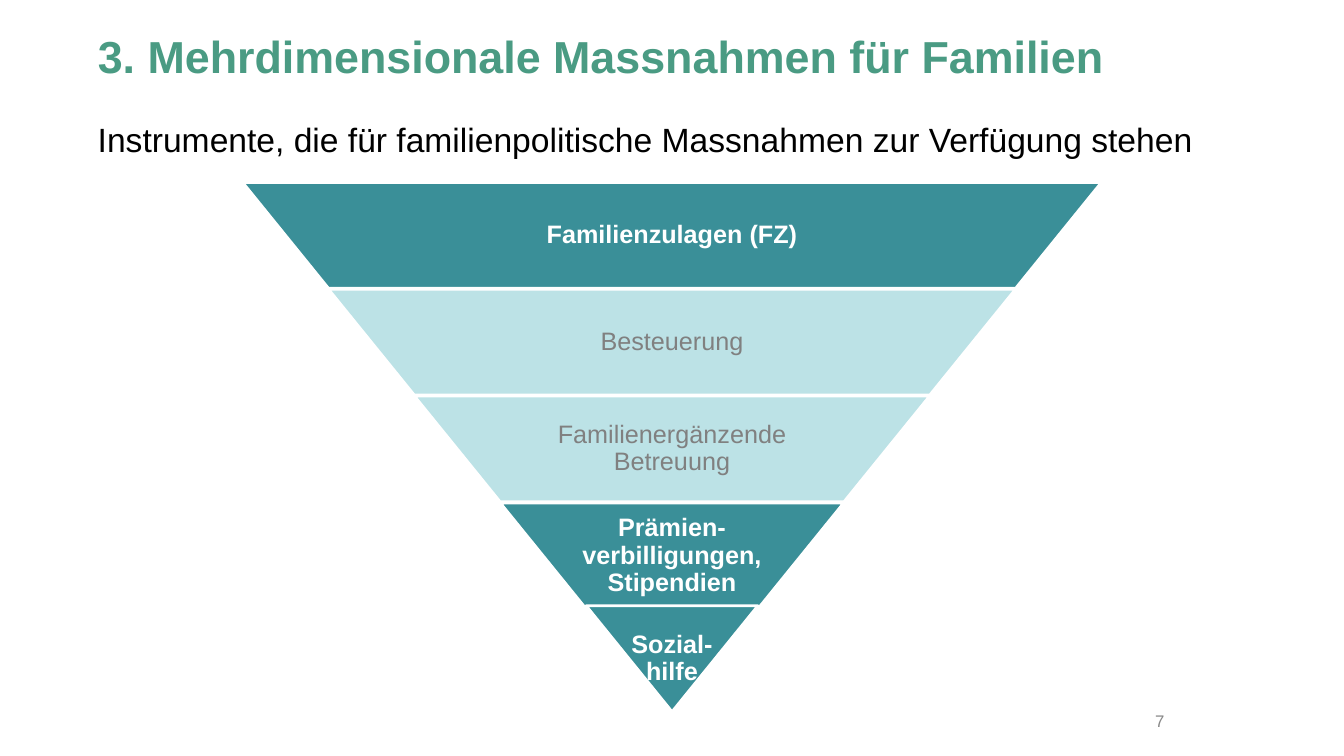
from dataclasses import dataclass

from pptx import Presentation
from pptx.dml.color import RGBColor
from pptx.enum.shapes import MSO_SHAPE
from pptx.enum.text import MSO_ANCHOR, MSO_AUTO_SIZE, PP_ALIGN
from pptx.shapes.base import BaseShape
from pptx.slide import Slide
from pptx.util import Inches, Length, Pt

SLIDE_WIDTH, SLIDE_HEIGHT = Inches(13.33), Inches(7.5)

# Pyramid grid, in percent of the slide's width and height
CENTER, PYRAMID_TOP, LAST_TOP = 50, 24.13, 80.13
COLUMN, ROW, TIER_HEIGHT = 12.78, 14.13, 14
TEXT_SHARE = 0.65
TIER_SLOPE = 0.81

TEAL, PALE_TEAL, GREEN = "3A8F98", "BCE2E6", "4A9B83"
WHITE, BLACK, GRAY, PAGE_GRAY = "FFFFFF", "000000", "808080", "888888"


@dataclass(frozen=True)
class Box:
    """A rectangle in percent of the slide's width and height."""

    left: float
    top: float
    width: float
    height: float

    def lengths(self) -> tuple[Length, Length, Length, Length]:
        return (
            Length(SLIDE_WIDTH * self.left / 100),
            Length(SLIDE_HEIGHT * self.top / 100),
            Length(SLIDE_WIDTH * self.width / 100),
            Length(SLIDE_HEIGHT * self.height / 100),
        )


@dataclass(frozen=True)
class TextStyle:
    size: int
    color: str
    bold: bool = False
    alignment: PP_ALIGN = PP_ALIGN.LEFT
    anchor: MSO_ANCHOR = MSO_ANCHOR.MIDDLE
    line_spacing: float = 1.0
    inset: float = 0.05


@dataclass(frozen=True)
class Tier:
    text: str
    highlighted: bool


TITLE_STYLE = TextStyle(32, GREEN, bold=True, line_spacing=0.9)
SUBTITLE_STYLE = TextStyle(24, BLACK, anchor=MSO_ANCHOR.TOP)
PAGE_STYLE = TextStyle(12, PAGE_GRAY, alignment=PP_ALIGN.RIGHT)

TIERS = [
    Tier("Familienzulagen (FZ)", True),
    Tier("Besteuerung", False),
    Tier("Familienergänzende Betreuung", False),
    Tier("Prämien-verbilligungen, Stipendien", True),
    Tier("Sozial-\vhilfe", True),
]


def rgb(color: str) -> RGBColor:
    return RGBColor.from_string(color)


def write_text(shape: BaseShape, text: str, style: TextStyle) -> None:
    frame = shape.text_frame
    frame.text = text
    frame.word_wrap = True
    frame.auto_size = MSO_AUTO_SIZE.NONE
    frame.vertical_anchor = style.anchor
    frame.margin_left = frame.margin_right = Inches(style.inset)
    frame.margin_top = frame.margin_bottom = Inches(style.inset)
    paragraph = frame.paragraphs[0]
    paragraph.alignment = style.alignment
    paragraph.line_spacing = style.line_spacing
    paragraph.font.name = "Arial"
    paragraph.font.size = Pt(style.size)
    paragraph.font.bold = style.bold
    paragraph.font.color.rgb = rgb(style.color)


def add_title(slide: Slide, text: str, box: Box) -> None:
    title = slide.shapes.title
    title.left, title.top, title.width, title.height = box.lengths()
    write_text(title, text, TITLE_STYLE)


def add_text(slide: Slide, text: str, box: Box, style: TextStyle) -> None:
    write_text(slide.shapes.add_textbox(*box.lengths()), text, style)


def centered_box(top: float, width: float) -> Box:
    return Box(CENTER - width / 2, top, width, TIER_HEIGHT)


def add_tier(slide: Slide, index: int, tier: Tier) -> None:
    columns = len(TIERS) - index
    width = columns * COLUMN
    top = min(PYRAMID_TOP + index * ROW, LAST_TOP)
    shape = slide.shapes.add_shape(
        MSO_SHAPE.TRAPEZOID, *centered_box(top, width).lengths()
    )
    shape.rotation = 180
    shape.adjustments[0] = TIER_SLOPE
    shape.shadow.inherit = False
    shape.fill.solid()
    shape.fill.fore_color.rgb = rgb(TEAL if tier.highlighted else PALE_TEAL)
    shape.line.color.rgb = rgb(WHITE)
    shape.line.width = Pt(2)

    text_width = width if columns == 1 else width * TEXT_SHARE
    style = TextStyle(
        18,
        WHITE if tier.highlighted else GRAY,
        bold=tier.highlighted,
        alignment=PP_ALIGN.CENTER,
        line_spacing=0.9,
        inset=0.03,
    )
    add_text(slide, tier.text, centered_box(top, text_width), style)


def main() -> None:
    presentation = Presentation()
    presentation.slide_width = SLIDE_WIDTH
    presentation.slide_height = SLIDE_HEIGHT
    slide = presentation.slides.add_slide(
        presentation.slide_layouts.get_by_name("Title Only")
    )
    add_title(
        slide,
        "3. Mehrdimensionale Massnahmen für Familien",
        Box(6.9, 0.8, 86.27, 14.13),
    )
    add_text(slide, "7", Box(84.77, 93.47, 2.25, 3.87), PAGE_STYLE)
    for index, tier in enumerate(TIERS):
        add_tier(slide, index, tier)
    add_text(
        slide,
        "Instrumente, die für familienpolitische Massnahmen zur Verfügung stehen",
        Box(6.9, 15.07, 84.02, 6.67),
        SUBTITLE_STYLE,
    )
    presentation.save("out.pptx")


if __name__ == "__main__":
    main()
